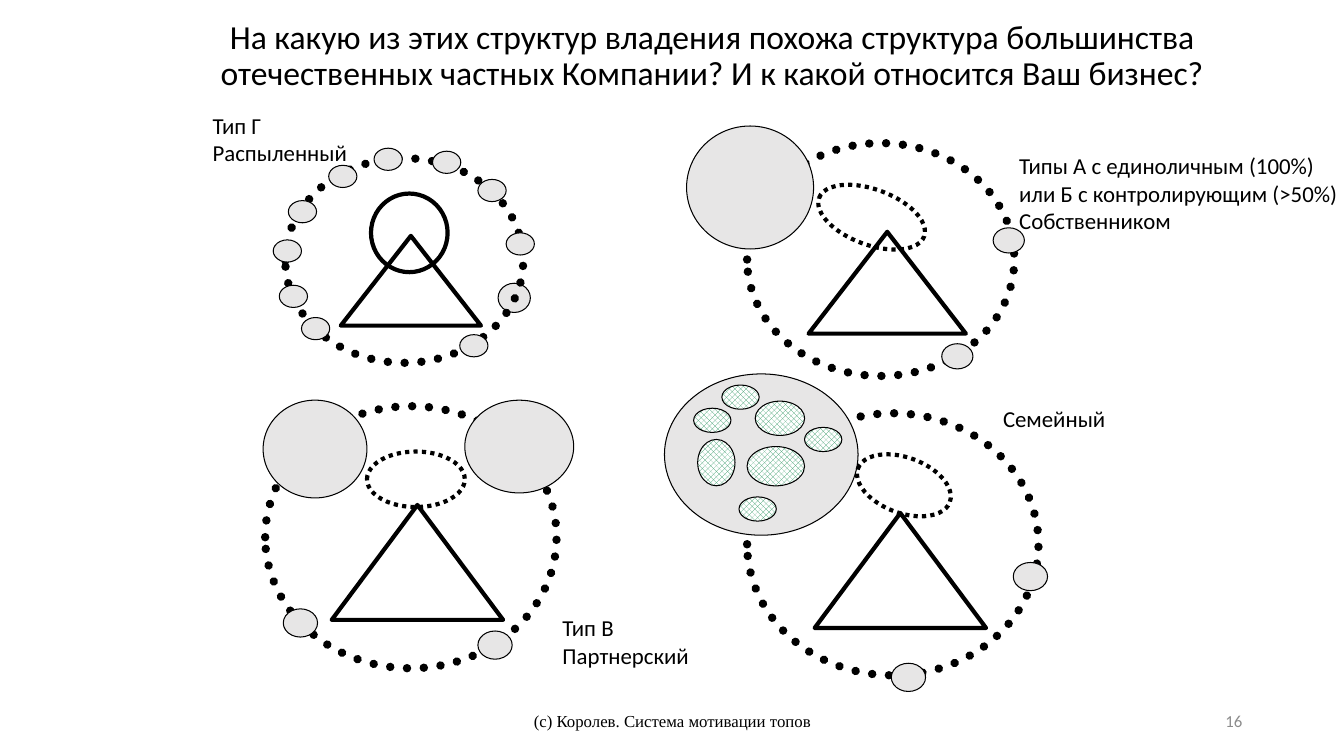
from dataclasses import dataclass

from pptx import Presentation
from pptx.dml.color import RGBColor
from pptx.enum.dml import MSO_LINE, MSO_PATTERN
from pptx.enum.shapes import MSO_SHAPE as Shape
from pptx.enum.text import MSO_ANCHOR as Anchor, MSO_AUTO_SIZE as AutoSize, PP_ALIGN as Align
from pptx.util import Inches, Pt


@dataclass(frozen=True)
class Theme:
    black: RGBColor = RGBColor(0x00, 0x00, 0x00)
    white: RGBColor = RGBColor(0xFF, 0xFF, 0xFF)
    owner: RGBColor = RGBColor(0xE7, 0xE6, 0xE6)
    relative: RGBColor = RGBColor(0x33, 0x99, 0x66)
    number: RGBColor = RGBColor(0x8C, 0x8C, 0x8C)
    body_font: str = "Calibri"
    footer_font: str = "Times New Roman"
    title_size: float = 24
    label_size: float = 16.3
    footer_size: float = 12
    thin: float = 0.75
    thick: float = 3
    ring: float = 6


theme = Theme()
presentation = Presentation()
presentation.slide_width = Inches(13.33)
presentation.slide_height = Inches(7.5)
slide = presentation.slides.add_slide(presentation.slide_layouts[5])


def write(text, box, shape=None, size=theme.label_size, font=theme.body_font, color=theme.black,
          align=Align.LEFT, anchor=Anchor.TOP, wrap=False, spacing=1.0):
    left, top, width, height = map(Inches, box)
    if shape is None:
        shape = slide.shapes.add_textbox(left, top, width, height)
    else:
        shape.left, shape.top, shape.width, shape.height = left, top, width, height
    frame = shape.text_frame
    frame.text = text
    frame.word_wrap = wrap
    frame.auto_size = AutoSize.NONE if wrap else AutoSize.SHAPE_TO_FIT_TEXT
    frame.vertical_anchor = anchor
    for paragraph in frame.paragraphs:
        paragraph.alignment = align
        paragraph.line_spacing = spacing
        paragraph.font.size = Pt(size)
        paragraph.font.name = font
        paragraph.font.color.rgb = color


def draw(box, kind=Shape.OVAL, fill=None, pattern=None, weight=theme.thin, dotted=False, rotation=0):
    shape = slide.shapes.add_shape(kind, *map(Inches, box))
    shape.shadow.inherit = False
    shape.rotation = rotation
    if pattern:
        shape.fill.patterned()
        shape.fill.pattern = pattern
        shape.fill.fore_color.rgb = fill
        shape.fill.back_color.rgb = theme.white
    elif fill:
        shape.fill.solid()
        shape.fill.fore_color.rgb = fill
    else:
        shape.fill.background()
    shape.line.color.rgb = theme.black
    shape.line.width = Pt(weight)
    if dotted:
        shape.line.dash_style = MSO_LINE.ROUND_DOT
        if weight == theme.ring:
            shape.line._get_or_add_ln().set("cap", "rnd")


write("На какую из этих структур владения похожа структура большинства "
      "отечественных частных Компании? И к какой относится Ваш бизнес?",
      (1.76, 0.08, 10.61, 0.97), shape=slide.shapes.title, size=theme.title_size,
      align=Align.CENTER, anchor=Anchor.MIDDLE, wrap=True, spacing=0.9)
write("(с) Королев. Система мотивации топов", (4.42, 6.95, 4.5, 0.4), size=theme.footer_size,
      font=theme.footer_font, align=Align.CENTER, anchor=Anchor.MIDDLE, wrap=True)
write("16", (9.42, 6.95, 3, 0.4), size=theme.footer_size, color=theme.number,
      align=Align.RIGHT, anchor=Anchor.MIDDLE, wrap=True)

draw((4.94, 2.81, 0.32, 0.29), fill=theme.owner)
draw((3.68, 1.92, 0.76, 0.78), weight=theme.thick)

structures = [
    dict(company=(3.38, 2.34, 1.39, 0.89), ring=(2.83, 1.57, 2.36, 2.03), large=[],
         small_size=(0.28, 0.22),
         small=[(3.26, 1.64), (3.71, 1.47), (4.29, 1.5), (4.74, 1.78), (5.02, 2.31),
                (2.77, 2.83), (2.71, 2.38), (2.86, 1.99), (2.99, 3.15), (4.56, 3.32)]),
    dict(company=(8.02, 2.3, 1.56, 1.01), ring=(7.41, 1.42, 2.65, 2.31),
         large=[(6.81, 1.25, 1.26, 1.22)],
         small_size=(0.31, 0.25), small=[(9.85, 2.26), (9.34, 3.41)]),
    dict(company=(3.29, 5.01, 1.7, 1.14), ring=(2.63, 4.03, 2.89, 2.6),
         large=[(2.61, 3.97, 1.03, 0.97), (4.61, 3.97, 1.08, 0.92)],
         small_size=(0.34, 0.28), small=[(2.81, 6.04), (4.74, 6.26)]),
    dict(company=(8.08, 5.09, 1.7, 1.14), ring=(7.41, 4.1, 2.89, 2.6),
         large=[(6.59, 3.71, 1.92, 1.6)],
         small_size=(0.34, 0.28), small=[(8.84, 6.58), (10.05, 5.58)]),
]
for structure in structures:
    draw(structure["company"], kind=Shape.ISOSCELES_TRIANGLE, weight=theme.thick)
    draw(structure["ring"], weight=theme.ring, dotted=True)
    small = [position + structure["small_size"] for position in structure["small"]]
    for owner in structure["large"] + small:
        draw(owner, fill=theme.owner)

boards = [
    ((8.09, 1.88, 1.11, 0.55), 20.2),
    ((8.48, 4.54, 0.97, 0.55), 20.2),
    ((3.64, 4.48, 0.97, 0.55), 0),
]
for board, rotation in boards:
    draw(board, weight=theme.thick, dotted=True, rotation=rotation)

relatives = [
    (6.88, 4.05, 0.37, 0.24), (7.16, 3.82, 0.37, 0.24), (7.49, 3.98, 0.49, 0.34),
    (6.92, 4.36, 0.37, 0.46), (7.41, 4.43, 0.57, 0.39), (7.33, 4.93, 0.37, 0.24),
    (7.98, 4.24, 0.37, 0.24),
]
for relative in relatives:
    draw(relative, fill=theme.relative, pattern=MSO_PATTERN.SOLID_DIAMOND)

labels = [
    ("Типы А с единоличным (100%)\nили Б с контролирующим (>50%)\nСобственником",
     (10.01, 1.46, 3.4, 0.93)),
    ("Тип В\nПартнерский", (5.48, 6.04, 1.47, 0.65)),
    ("Тип Г\nРаспыленный", (2.01, 1.06, 1.55, 0.65)),
    ("Семейный", (9.85, 3.97, 1.23, 0.38)),
]
for text, box in labels:
    write(text, box)

presentation.save("out.pptx")
